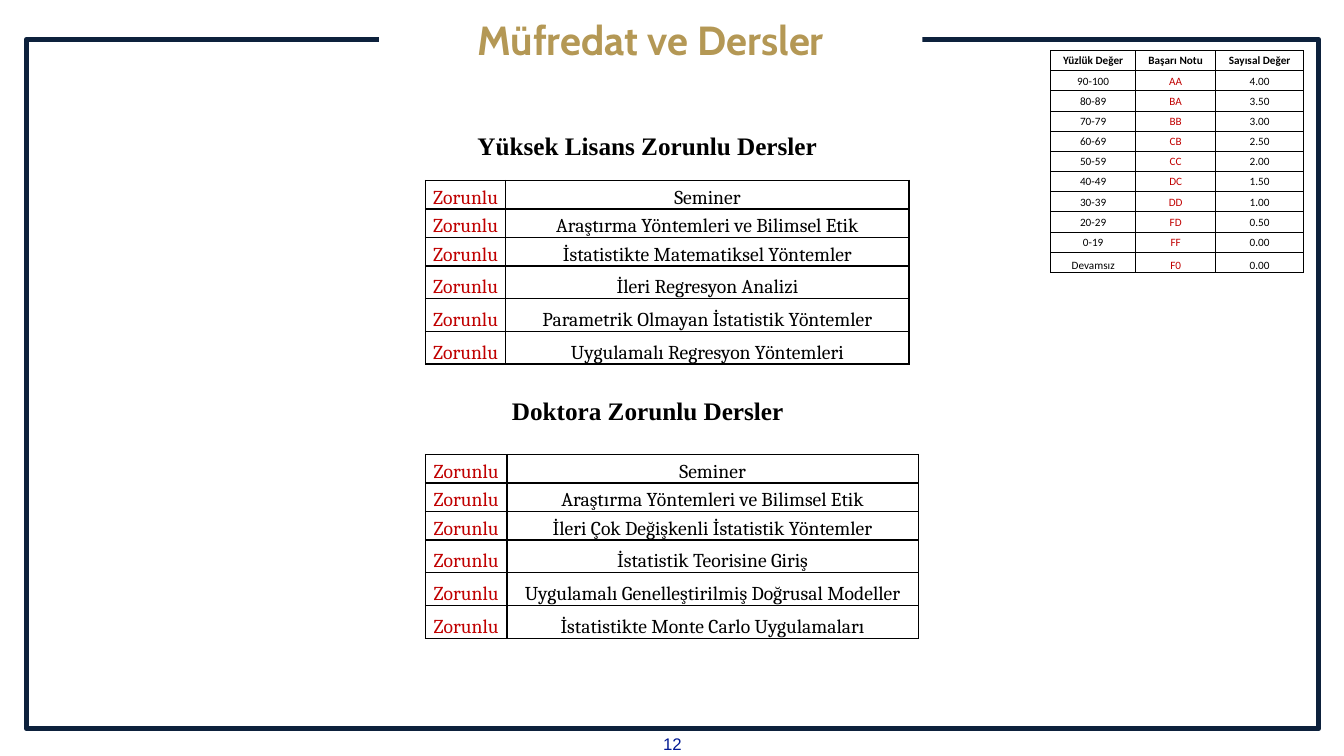
import pptx
import pptx.dml.color
import pptx.enum.shapes
import pptx.enum.text
import pptx.oxml
import pptx.oxml.ns
import pptx.util

NAVY, GOLD, RED, BLACK, WHITE, BLUE = "0D213C", "B49855", "C00000", "000000", "FFFFFF", "011993"
TOP = pptx.enum.text.MSO_ANCHOR.TOP
MIDDLE = pptx.enum.text.MSO_ANCHOR.MIDDLE
BOTTOM = pptx.enum.text.MSO_ANCHOR.BOTTOM
RECTANGLE = pptx.enum.shapes.MSO_SHAPE.RECTANGLE


def color(value):
    return pptx.dml.color.RGBColor.from_string(value)


def write(frame, text, font, size, ink, bold=False):
    paragraph = frame.paragraphs[0]
    paragraph.text = text
    paragraph.alignment = pptx.enum.text.PP_ALIGN.CENTER
    paragraph.font.name = font
    paragraph.font.size = pptx.util.Pt(size)
    paragraph.font.bold = bold
    paragraph.font.color.rgb = color(ink)


presentation = pptx.Presentation()
presentation.slide_width = pptx.util.Inches(13.33)
presentation.slide_height = pptx.util.Inches(7.5)
slide = presentation.slides.add_slide(presentation.slide_layouts[6])

# Grid of 100 columns by 100 rows
column = presentation.slide_width / 100
row = presentation.slide_height / 100

# Border frame
frame = slide.shapes.add_shape(
    RECTANGLE, int(1.95 * column), int(5.2 * row), int(96.17 * column), int(91.2 * row))
frame.shadow.inherit = False
frame.fill.background()
frame.line.color.rgb = color(NAVY)
frame.line.width = pptx.util.Pt(3.5)

# Title, interrupting the top edge of the frame
title = slide.shapes.add_shape(
    RECTANGLE, int(28.2 * column), int(1.87 * row), int(40.43 * column), int(6.53 * row))
title.shadow.inherit = False
title.fill.solid()
title.fill.fore_color.rgb = color(WHITE)
title.line.fill.background()
write(title.text_frame, "Müfredat ve Dersler", "Cabin", 29, GOLD, True)

# Section headings and slide number
labels = [
    ("Yüksek Lisans Zorunlu Dersler", 34.66, 16.53, 27, 8.93, "Times New Roman", 18, BLACK, True),
    ("Doktora Zorunlu Dersler", 23.18, 51.6, 50.03, 8.93, "Times New Roman", 18, BLACK, True),
    ("12", 38.78, 96.4, 22.5, 3.87, "Arial", 12, BLUE, False),
]
for text, left, top, width, height, font, size, ink, bold in labels:
    label = slide.shapes.add_textbox(
        int(left * column), int(top * row), int(width * column), int(height * row))
    label.text_frame.word_wrap = True
    label.text_frame.vertical_anchor = TOP if bold else MIDDLE
    write(label.text_frame, text, font, size, ink, bold)

# The title and the number have no inner margins
for text_frame in (title.text_frame, label.text_frame):
    text_frame.margin_left = text_frame.margin_right = 0
    text_frame.margin_top = text_frame.margin_bottom = 0
    text_frame.vertical_anchor = MIDDLE

# Table contents
masters_courses = [
    "Seminer",
    "Araştırma Yöntemleri ve Bilimsel Etik",
    "İstatistikte Matematiksel Yöntemler",
    "İleri Regresyon Analizi",
    "Parametrik Olmayan İstatistik Yöntemler",
    "Uygulamalı Regresyon Yöntemleri",
]
doctoral_courses = [
    "Seminer",
    "Araştırma Yöntemleri ve Bilimsel Etik",
    "İleri Çok Değişkenli İstatistik Yöntemler",
    "İstatistik Teorisine Giriş",
    "Uygulamalı Genelleştirilmiş Doğrusal Modeller",
    "İstatistikte Monte Carlo Uygulamaları",
]
grades = [
    ("Yüzlük Değer", "Başarı Notu", "Sayısal Değer"),
    ("90-100", "AA", "4.00"),
    ("80-89", "BA", "3.50"),
    ("70-79", "BB", "3.00"),
    ("60-69", "CB", "2.50"),
    ("50-59", "CC", "2.00"),
    ("40-49", "DC", "1.50"),
    ("30-39", "DD", "1.00"),
    ("20-29", "FD", "0.50"),
    ("0-19", "FF", "0.00"),
    ("Devamsız", "F0", "0.00"),
]
course_heights = [3.77] * 3 + [4.33] * 3

# Each table: rows, left, top, widths, heights, font, size, red column, border, margin, has header
tables = [
    ([("Zorunlu", course) for course in masters_courses], 31.65, 23.87, [5.99, 30],
     course_heights, "Cambria", 14, 0, 1, 0, False),
    ([("Zorunlu", course) for course in doctoral_courses], 31.65, 60.13, [6.08, 30.6],
     course_heights, "Cambria", 14, 0, 1, 0, False),
    (grades, 78.17, 6.67, [6.34, 5.94, 6.56],
     [2.67] * len(grades), "Calibri", 8, 1, 0.5, 0.01, True),
]
for rows, left, top, widths, heights, font, size, red_column, border, margin, has_header in tables:
    table = slide.shapes.add_table(
        len(rows), len(widths), int(left * column), int(top * row),
        int(sum(widths) * column), int(sum(heights) * row)).table
    table.first_row = table.horz_banding = False
    for table_column, width in zip(table.columns, widths):
        table_column.width = int(width * column)
    for table_row, height in zip(table.rows, heights):
        table_row.height = int(height * row)

    for i, values in enumerate(rows):
        header = has_header and i == 0
        for j, text in enumerate(values):
            cell = table.cell(i, j)
            cell.margin_left = cell.margin_right = cell.margin_top = pptx.util.Inches(margin)
            cell.margin_bottom = 0
            last = i == len(rows) - 1
            cell.vertical_anchor = MIDDLE if has_header and not last else BOTTOM
            ink = RED if j == red_column and not header else BLACK
            write(cell.text_frame, text, font, size, ink, header)

            # Borders come before the fill in the cell properties
            properties = cell._tc.get_or_add_tcPr()
            for side in ("lnL", "lnR", "lnT", "lnB"):
                properties.append(pptx.oxml.parse_xml(
                    f'<a:{side} {pptx.oxml.ns.nsdecls("a")} w="{pptx.util.Pt(border)}">'
                    f'<a:solidFill><a:srgbClr val="{BLACK}"/></a:solidFill></a:{side}>'))
            cell.fill.background()

presentation.save("out.pptx")
